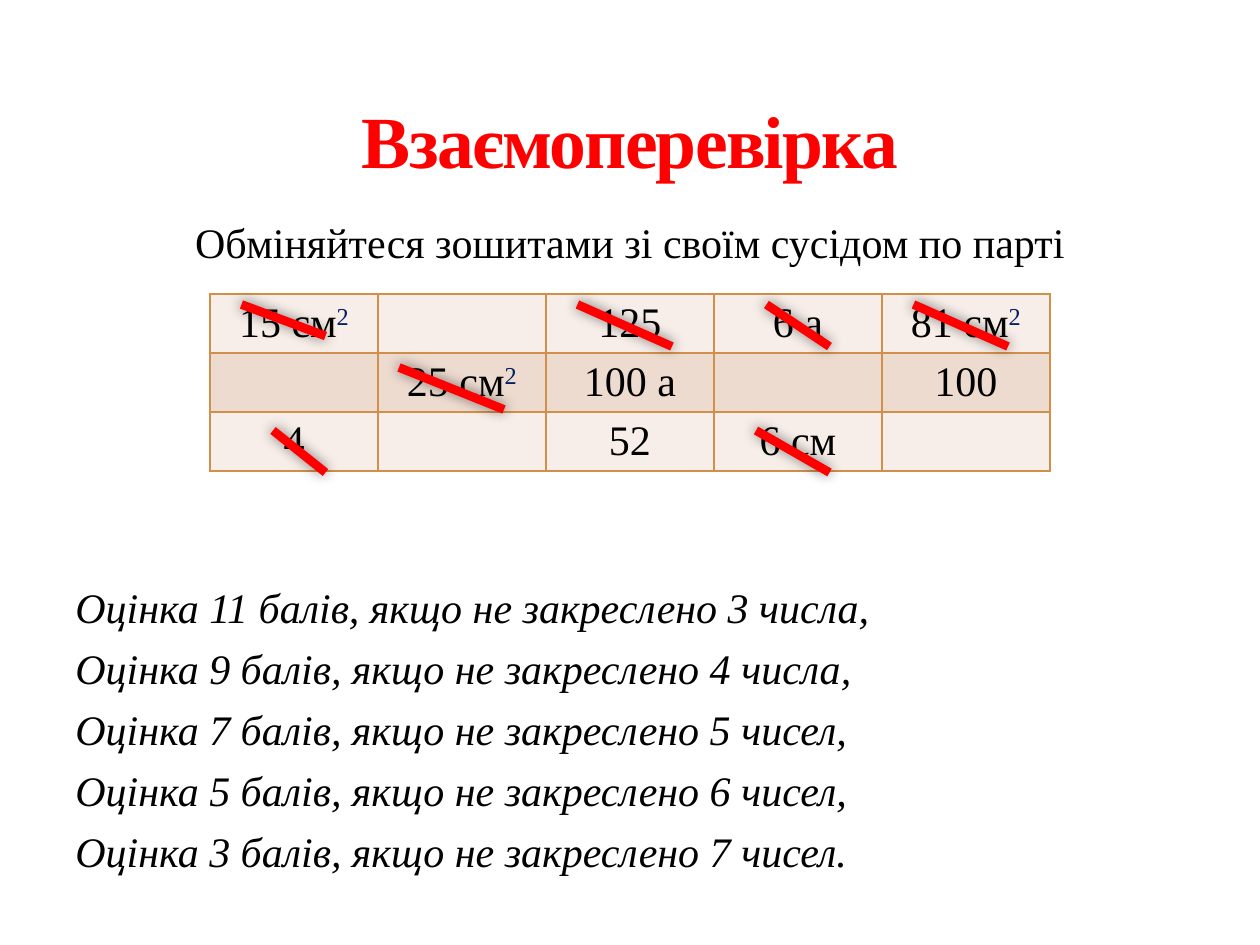
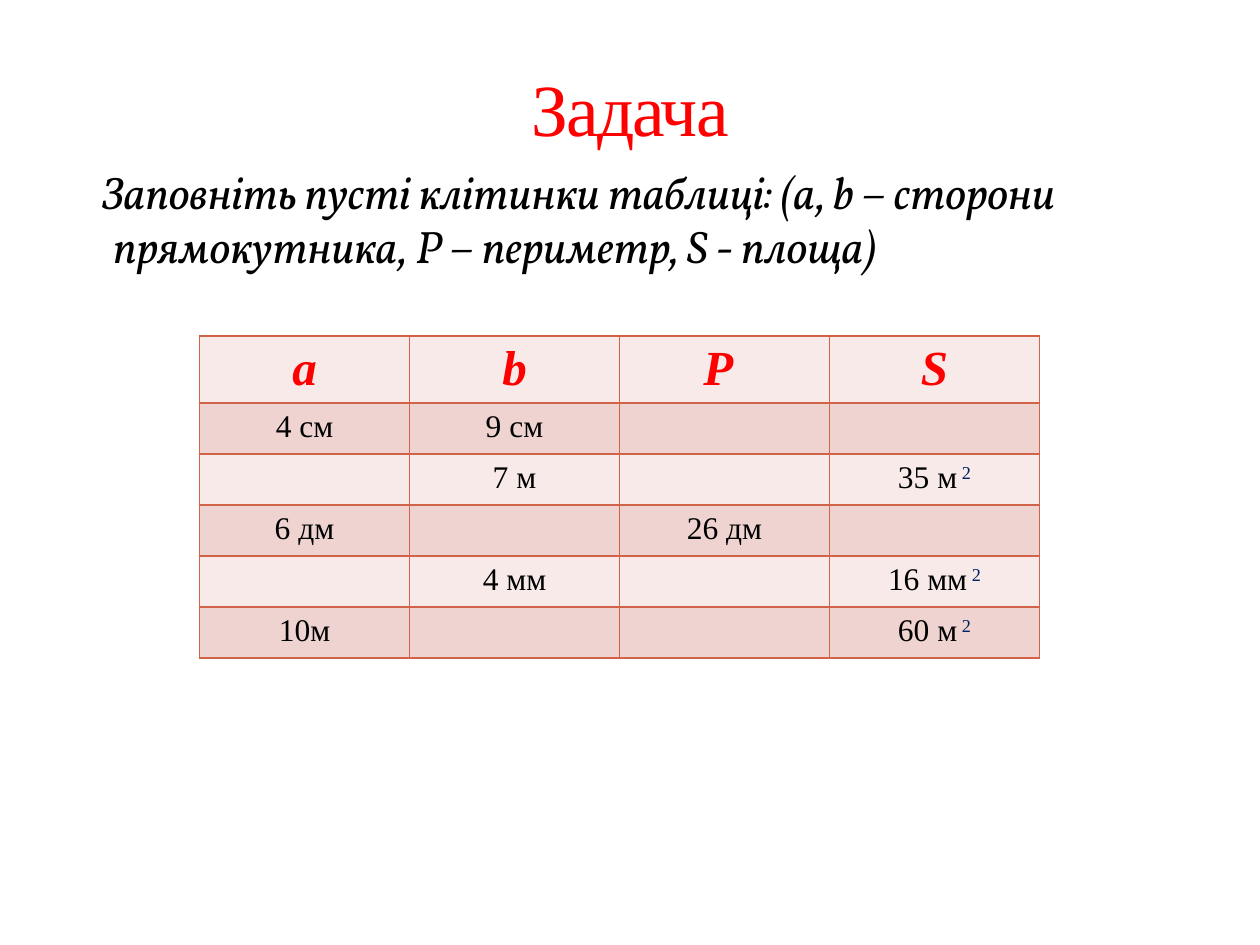
from dataclasses import dataclass

from lxml.etree import SubElement
from pptx import Presentation
from pptx.dml.color import RGBColor
from pptx.enum.shapes import MSO_CONNECTOR as Connector
from pptx.enum.text import MSO_ANCHOR as Anchor, PP_ALIGN as Align
from pptx.oxml import parse_xml
from pptx.oxml.ns import nsdecls, qn
from pptx.util import Pt

# Shared look
SERIF, VOLLKORN = "Times New Roman", "Vollkorn"
RED, BLACK, NAVY = "FF0000", "000000", "002060"
MARGIN, TEXT_WIDTH = 36, 648
TITLE_TOP = 12


@dataclass(frozen=True)
class Style:
    size: float
    color: str = BLACK
    bold: bool = False
    italic: bool = False
    font: str = SERIF


@dataclass(frozen=True)
class Grid:
    left: float
    top: float
    column_width: float
    row_heights: list[float]
    bands: tuple[str, str]
    border: str
    head: Style
    body: Style
    rows: list[list[str]]


@dataclass(frozen=True)
class Strike:
    left: float
    top: float
    width: float
    height: float = 24


def rgb(value: str) -> RGBColor:
    return RGBColor.from_string(value)


def add_run(paragraph, text: str, style: Style):
    run = paragraph.add_run()
    run.text = text
    font = run.font
    font.name, font.size = style.font, Pt(style.size)
    font.bold, font.italic = style.bold, style.italic
    font.color.rgb = rgb(style.color)
    return run


def add_title_slide(deck, title: str, height: float, bold: bool):
    slide = deck.slides.add_slide(deck.slide_layouts[5])
    heading = slide.shapes.title
    heading.left, heading.top = Pt(MARGIN), Pt(TITLE_TOP)
    heading.width, heading.height = Pt(TEXT_WIDTH), Pt(height)
    heading.text_frame.vertical_anchor = Anchor.BOTTOM
    paragraph = heading.text_frame.paragraphs[0]
    paragraph.alignment = Align.CENTER
    run = add_run(paragraph, title, Style(42, RED, bold))
    run.font._element.set("spc", "-100")
    return slide


def add_text(slide, top: float, height: float, lines: list[str], style: Style,
             align=Align.LEFT, gap: float = 0) -> list:
    box = slide.shapes.add_textbox(Pt(MARGIN), Pt(top), Pt(TEXT_WIDTH), Pt(height))
    frame = box.text_frame
    frame.word_wrap = True
    for number, line in enumerate(lines):
        paragraph = frame.add_paragraph() if number else frame.paragraphs[0]
        paragraph.alignment = align
        paragraph.space_before = Pt(gap if number else 0)
        add_run(paragraph, line, style)
    return list(frame.paragraphs)


def set_borders(cell, color: str) -> None:
    properties = cell._tc.get_or_add_tcPr()
    for position, side in enumerate(("lnL", "lnR", "lnT", "lnB")):
        properties.insert(position, parse_xml(
            f'<a:{side} {nsdecls("a")} w="{Pt(1)}"><a:solidFill>'
            f'<a:srgbClr val="{color}"/></a:solidFill></a:{side}>'))


def add_grid(slide, grid: Grid) -> None:
    columns = len(grid.rows[0])
    table = slide.shapes.add_table(
        len(grid.rows), columns, Pt(grid.left), Pt(grid.top),
        Pt(grid.column_width * columns), Pt(sum(grid.row_heights))).table
    table.first_row = table.horz_banding = False
    for column in table.columns:
        column.width = Pt(grid.column_width)
    for r, values in enumerate(grid.rows):
        table.rows[r].height = Pt(grid.row_heights[r])
        style = grid.body if r else grid.head
        for c, value in enumerate(values):
            cell = table.cell(r, c)
            cell.margin_bottom = Pt(1)
            cell.fill.solid()
            cell.fill.fore_color.rgb = rgb(grid.bands[r % 2])
            set_borders(cell, grid.border)
            if not value:
                continue
            # "^" marks the start of the exponent
            base, mark, power = value.partition("^")
            paragraph = cell.text_frame.paragraphs[0]
            paragraph.alignment = Align.CENTER
            add_run(paragraph, base, style)
            if mark:
                exponent = add_run(paragraph, power, Style(style.size, NAVY))
                exponent.font._element.set("baseline", "30000")


def add_strike(slide, strike: Strike) -> None:
    line = slide.shapes.add_connector(
        Connector.STRAIGHT, Pt(strike.left), Pt(strike.top),
        Pt(strike.left + strike.width), Pt(strike.top + strike.height))
    line.line.color.rgb = rgb(RED)
    line.line.width = Pt(5)
    effects = SubElement(line._element.spPr, qn("a:effectLst"))
    shadow = SubElement(effects, qn("a:outerShdw"), blurRad=str(Pt(7.5)),
                        dist="0", dir="0", rotWithShape="0")
    shade = SubElement(shadow, qn("a:srgbClr"), val=BLACK)
    SubElement(shade, qn("a:alpha"), val="50000")


def build_peer_check(deck) -> None:
    slide = add_title_slide(deck, "Взаємоперевірка", 96.5, bold=True)
    add_text(slide, 120, 36, ["Обміняйтеся зошитами зі своїм сусідом по парті"],
             Style(24), Align.CENTER)

    # Grading scale
    scale = [(11, "3 числа,"), (9, "4 числа,"), (7, "5 чисел,"),
             (5, "6 чисел,"), (3, "7 чисел.")]
    add_text(slide, 329, 175,
             [f"Оцінка {grade} балів, якщо не закреслено {missed}"
              for grade, missed in scale],
             Style(24, italic=True), gap=6)

    # Answers and the strokes over them
    answer = Style(24)
    add_grid(slide, Grid(
        120, 168, 96, [33.75] * 3, ("F7EEE9", "EEDBD0"), "D19049", answer, answer,
        [["15 см^2", "", "125", "6 а", "81 см^2"],
         ["", "25 см^2", "100 а", "", "100"],
         ["4", "", "52", "6 см", ""]]))
    first, second, third = 174, 210, 246
    for strike in (Strike(330, first, 54), Strike(438, first, 36),
                   Strike(522, first, 54), Strike(228, second, 60),
                   Strike(156, third, 30), Strike(432, third, 42),
                   Strike(138, first, 48, 18)):
        add_strike(slide, strike)


def build_problem(deck) -> None:
    slide = add_title_slide(deck, "Задача", 78, bold=False)
    task = add_text(
        slide, 90, 80,
        ["Заповніть пусті клітинки таблиці: (а, b – сторони "
         "прямокутника, Р – периметр, S - площа)"],
        Style(26, italic=True, font=VOLLKORN))[0]
    indents = task._p.get_or_add_pPr()
    indents.set("marL", str(Pt(21.6)))
    indents.set("indent", str(Pt(-6)))

    # Rectangle measures
    add_grid(slide, Grid(
        114, 192, 120, [38.4] + [29.15] * 5, ("F7EAE9", "EED3D0"), "D16349",
        Style(28, RED, bold=True, italic=True), Style(18),
        [["а", "b", "Р ", "S"],
         ["4 см", "9 см", "", ""],
         ["", "7 м", "", "35 м^ 2"],
         ["6 дм", "", "26 дм", ""],
         ["", "4 мм", "", "16 мм^ 2"],
         ["10м", "", "", "60 м^ 2"]]))


def main() -> None:
    deck = Presentation()
    deck.slide_width, deck.slide_height = Pt(720), Pt(540)
    build_peer_check(deck)
    build_problem(deck)
    deck.save("out.pptx")


if __name__ == "__main__":
    main()
